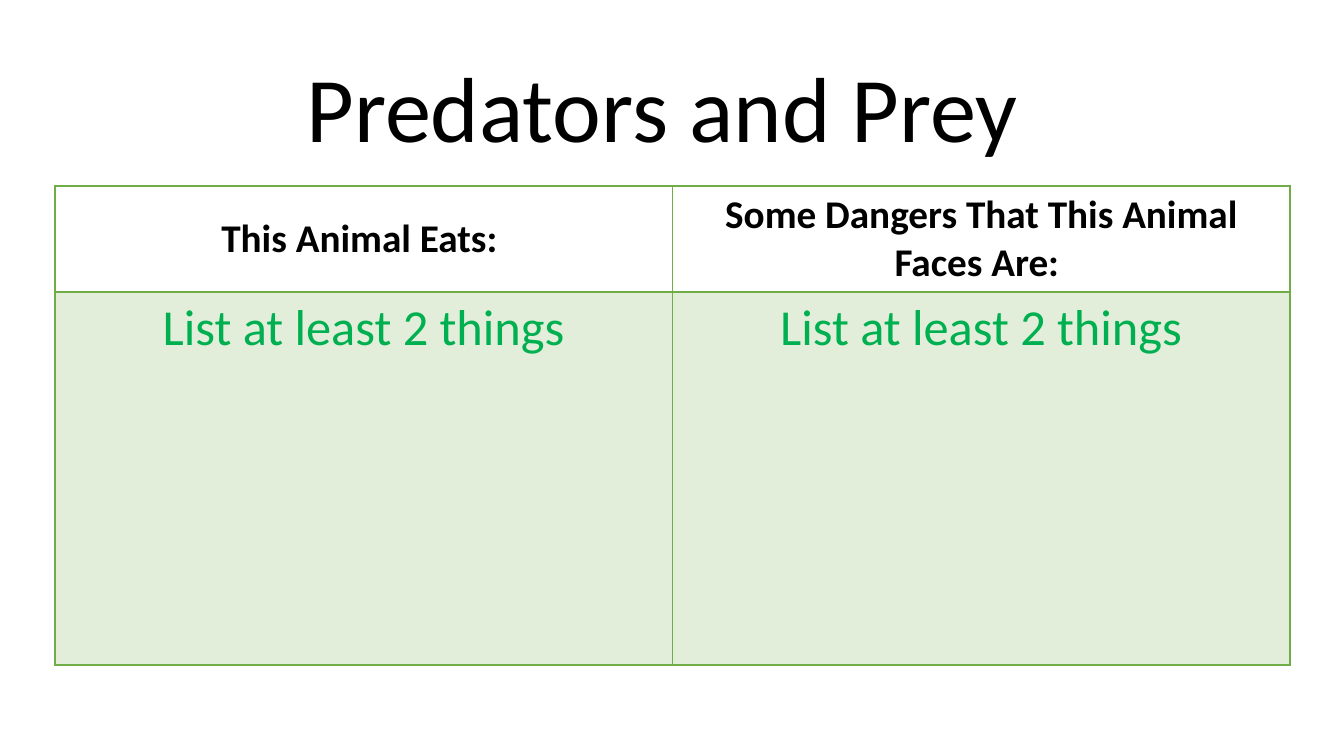
from lxml.etree import SubElement
from pptx import Presentation
from pptx.dml.color import RGBColor
from pptx.enum.text import MSO_ANCHOR as Anchor, PP_ALIGN as Align
from pptx.oxml.ns import qn
from pptx.util import Emu, Pt

FONT = "Calibri"
COLORS = {"text": "000000", "prompt": "00B050", "grid": "70AD47"}
BODY_ALPHA = 20  # percent
TITLE = "Predators and Prey "
HEADINGS = ["This Animal Eats: ", "Some Dangers That This Animal Faces Are: "]
PROMPT = "List at least 2 things"


def px(length):
    return Emu(round(length * 914400 / 100.8))


def write(text_frame, text, size, color, bold=False):
    """Put one centred run into the first paragraph."""
    paragraph = text_frame.paragraphs[0]
    paragraph.alignment = Align.CENTER
    run = paragraph.add_run()
    run.text = text
    run.font.name = FONT
    run.font.size = Pt(size)
    run.font.bold = bold
    run.font.color.rgb = RGBColor.from_string(COLORS[color])
    return paragraph


def set_borders(cell, **widths):
    """Line the left, right, top and bottom edges, 1 pt unless given."""
    properties = cell._tc.get_or_add_tcPr()
    for side in "LRTB":
        width = Pt(widths.get(side, 1))
        line = SubElement(properties, qn(f"a:ln{side}"), w=str(width))
        fill = SubElement(line, qn("a:solidFill"))
        SubElement(fill, qn("a:srgbClr"), val=COLORS["grid"])


def tint(cell):
    cell.fill.solid()
    cell.fill.fore_color.rgb = RGBColor.from_string(COLORS["grid"])
    color = cell._tc.tcPr.find(f"{qn('a:solidFill')}/{qn('a:srgbClr')}")
    SubElement(color, qn("a:alpha"), val=str(BODY_ALPHA * 1000))


def add_title(slide):
    title = slide.shapes.title
    title.left, title.top, title.width, title.height = map(px, (93, 40, 1159, 146))
    title.text_frame.vertical_anchor = Anchor.MIDDLE
    write(title.text_frame, TITLE, 66, "text").line_spacing = 0.9


def add_animal_table(slide):
    frame = slide.shapes.add_table(2, len(HEADINGS), px(55), px(186), px(1235), px(479))
    table = frame.table
    table.first_row = table.horz_banding = False
    table.rows[0].height, table.rows[1].height = px(106), px(373)

    for column, heading in enumerate(HEADINGS):
        # Heading cell with a heavier rule below
        header = table.cell(0, column)
        header.vertical_anchor = Anchor.MIDDLE
        set_borders(header, B=2)
        header.fill.background()
        write(header.text_frame, heading, 28, "text", bold=True)

        # Tinted answer cell
        answer = table.cell(1, column)
        set_borders(answer, T=2)
        tint(answer)
        write(answer.text_frame, PROMPT, 36, "prompt")


def main():
    presentation = Presentation()
    presentation.slide_width, presentation.slide_height = px(1344), px(756)
    slide = presentation.slides.add_slide(presentation.slide_layouts[5])
    add_title(slide)
    add_animal_table(slide)
    presentation.save("out.pptx")


if __name__ == "__main__":
    main()
